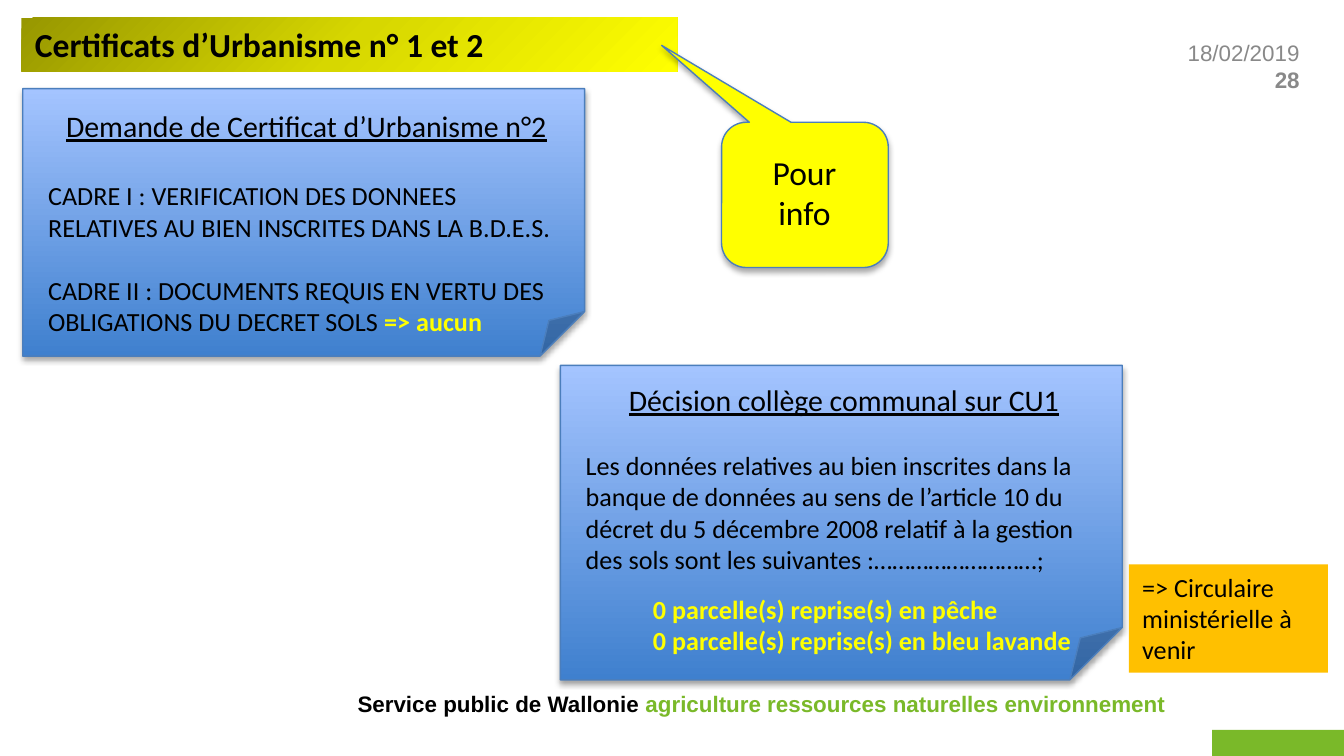
import copy
import pptx
import pptx.dml.color
import pptx.enum.shapes
import pptx.enum.text
import pptx.oxml
import pptx.oxml.ns
import pptx.util

Pt = pptx.util.Pt
SHAPE = pptx.enum.shapes.MSO_SHAPE
ALIGN = pptx.enum.text.PP_ALIGN
ANCHOR = pptx.enum.text.MSO_ANCHOR
qn = pptx.oxml.ns.qn

COLORS = {
    "black": "000000", "grey": "898989", "green": "7AB929", "yellow": "FFFF00",
    "orange": "FFC000", "outline": "4B7EBC", "blue": "3F80CE", "sky": "A4C4FF",
    "olive": "979700", "lime": "D7D700",
}

# Content: a paragraph is (runs, options), a run is (text, format)
BOLD = {"bold": True}
HEADING = {"size": 16, "underline": True}
ALERT = {"color": "yellow", "bold": True}
CENTER = {"align": ALIGN.CENTER}
RIGHT = {"align": ALIGN.RIGHT}

TITLE = [([("Certificats d’Urbanisme n° 1 et 2", BOLD)], {})]
DATE = [([("18/02/2019", {"color": "grey"})], RIGHT),
        ([("28", {"color": "grey", "bold": True})], RIGHT)]
FOOTER = [([("Service public de Wallonie ", BOLD),
            ("agriculture ressources naturelles environnement ",
             {"color": "green", "bold": True})], RIGHT)]
REQUEST = [
    ([("Demande de Certificat d’Urbanisme n°2", HEADING)], CENTER),
    ([("CADRE I : VERIFICATION DES DONNEES RELATIVES AU BIEN INSCRITES "
       "DANS LA B.D.E.S.", {})], {"before": 19.5}),
    ([("CADRE II : DOCUMENTS REQUIS EN VERTU DES OBLIGATIONS DU DECRET SOLS ", {}),
      ("=> aucun", ALERT)], {"before": 17}),
]
DECISION = [
    ([("Décision collège communal sur CU1", HEADING)], CENTER),
    ([("Les données relatives au bien inscrites dans la banque de données au sens "
       "de l’article 10 du décret du 5 décembre 2008 relatif à la gestion des sols "
       "sont les suivantes :………………………;", {})], {"before": 17}),
    ([("0 parcelle(s) reprise(s) en pêche", ALERT)], {"before": 9.75, "indent": 36}),
    ([("0 parcelle(s) reprise(s) en bleu lavande", ALERT)], {"indent": 36}),
]
NOTE = [([("=> Circulaire ministérielle à venir", {})], {})]
INFO = [([("Pour info", {})], CENTER)]

# Cards: left, top, height, text height, text offset from the top, paragraphs
CARD_WIDTH = 301
CARDS = [(12.2, 47.5, 143.3, 147.6, 6.5, REQUEST),
         (300.2, 195.8, 168.5, 154.8, 5.1, DECISION)]


def rgb(name):
    return pptx.dml.color.RGBColor.from_string(COLORS[name])


def write(box, paragraphs, size, font="Calibri", anchor=ANCHOR.TOP):
    frame = box.text_frame
    frame.word_wrap = True
    frame.auto_size = pptx.enum.text.MSO_AUTO_SIZE.NONE
    frame.vertical_anchor = anchor
    for index, (runs, options) in enumerate(paragraphs):
        para = frame.add_paragraph() if index else frame.paragraphs[0]
        para.alignment = options.get("align", ALIGN.LEFT)
        if "before" in options:
            para.space_before = Pt(options["before"])
        if "indent" in options:
            para._p.get_or_add_pPr().set("marL", str(Pt(options["indent"])))
        for text, style in runs:
            span = para.add_run()
            span.text = text
            span.font.name = font
            span.font.size = Pt(style.get("size", size))
            span.font.bold = style.get("bold", False)
            span.font.underline = style.get("underline", False)
            span.font.color.rgb = rgb(style.get("color", "black"))


def fill_gradient(shape, names, angle):
    shape.fill.gradient()
    shape.fill.gradient_angle = angle
    stop_list = shape._element.spPr.find(".//" + qn("a:gsLst"))
    while len(stop_list) < len(names):
        stop_list.append(copy.deepcopy(stop_list[-1]))
    for index, (stop, name) in enumerate(zip(shape.fill.gradient_stops, names)):
        stop.position = index / (len(names) - 1)
        stop.color.rgb = rgb(name)


def add_shape(kind, place, fill=None):
    shape = page.shapes.add_shape(kind, *map(Pt, place))
    shape.shadow.inherit = False
    shape.line.fill.background()
    if fill:
        shape.fill.solid()
        shape.fill.fore_color.rgb = rgb(fill)
    return shape


def outline_and_shade(shape):
    shape.line.color.rgb = rgb("outline")
    shape.line.width = Pt(0.75)
    effects = shape._element.spPr.find(qn("a:effectLst"))
    effects.append(pptx.oxml.parse_xml(
        '<a:outerShdw xmlns:a="http://schemas.openxmlformats.org/drawingml/2006/main" '
        f'blurRad="{Pt(3.1)}" dist="{Pt(1.8)}" dir="5400000" rotWithShape="0">'
        f'<a:srgbClr val="{COLORS["black"]}"><a:alpha val="35000"/></a:srgbClr>'
        '</a:outerShdw>'))


def add_text(place, *args, **options):
    write(page.shapes.add_textbox(*map(Pt, place)), *args, **options)


deck = pptx.Presentation()
deck.slide_width, deck.slide_height = Pt(720), Pt(405)
page = deck.slides.add_slide(deck.slide_layouts[5])

# Title band
title = page.shapes.title
title.left, title.top, title.width, title.height = map(Pt, (11.5, 9.4, 351.4, 28.8))
fill_gradient(title, ["olive", "lime", "yellow"], 315)
write(title, TITLE, 18, anchor=ANCHOR.MIDDLE)

# Date, page number and footer
add_text((561.6, 17.3, 141.8, 42.5), DATE, 12, font="Arial")
add_shape(SHAPE.RECTANGLE, (649.4, 391, 70.6, 14), "green")
add_text((0, 348.5, 635, 56.5), FOOTER, 12, font="Arial", anchor=ANCHOR.MIDDLE)

# Folded cards
for left, top, height, text_height, offset, paragraphs in CARDS:
    card = add_shape(SHAPE.FOLDED_CORNER, (left, top, CARD_WIDTH, height))
    fill_gradient(card, ["blue", "sky"], 90)
    outline_and_shade(card)
    add_text((left + 6.5, top + offset, CARD_WIDTH - 10, text_height), paragraphs, 14)

# Orange note
write(add_shape(SHAPE.RECTANGLE, (604.8, 302.4, 106.6, 58), "orange"), NOTE, 14)

# Callout and its label
callout = add_shape(SHAPE.ROUNDED_RECTANGULAR_CALLOUT, (386.6, 65.5, 89.3, 77.8), "yellow")
for index, value in enumerate((-0.86, -1.03, 0.17)):
    callout.adjustments[index] = value
outline_and_shade(callout)
write(add_shape(SHAPE.RECTANGLE, (398.2, 77.8, 65.5, 44.6), "yellow"), INFO, 18)

deck.save("out.pptx")
